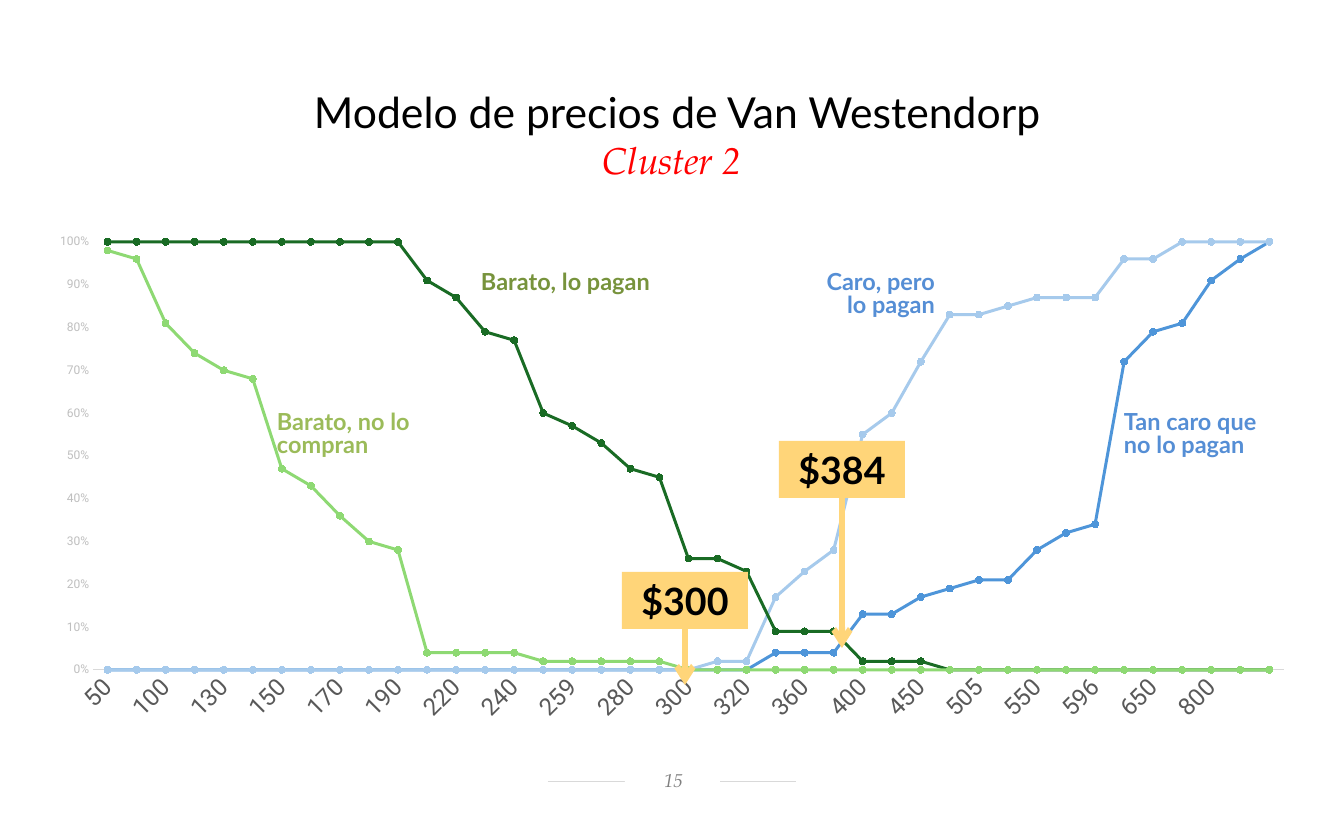
from dataclasses import dataclass

from lxml import etree
from pptx import Presentation, util as u
from pptx.chart.data import CategoryChartData
from pptx.dml.color import RGBColor
from pptx.enum import chart as charts, shapes, text
from pptx.oxml import parse_xml
from pptx.oxml.ns import nsdecls, qn

PX = 9525
LEFT, CENTER, RIGHT = text.PP_ALIGN.LEFT, text.PP_ALIGN.CENTER, text.PP_ALIGN.RIGHT
AMBER, GRAY, BLUE = "FFD579", "D9D9D9", "558ED5"


@dataclass
class Area:
    left: int
    top: int
    width: int
    height: int


@dataclass
class Label:
    words: str
    area: Area
    size: float
    color: str
    font: str = "Lato"
    bold: bool = False
    italic: bool = False
    align: text.PP_ALIGN = LEFT
    spacing: float = 1.0
    insets: tuple[int, int, int, int] = (12, 6, 12, 6)
    wrap: bool = True


@dataclass
class PricePoint:
    price: str
    area: Area
    arrow_end: int


@dataclass
class Curve:
    name: str
    color: str
    percents: list[int]


def curve_label(words: str, area: Area, color: str,
                align: text.PP_ALIGN = LEFT, wrap: bool = True) -> Label:
    return Label(words, area, 17.6, color, bold=True, align=align, spacing=0.8,
                 insets=(11, 5, 11, 6), wrap=wrap)


HEADINGS = [
    Label(" Modelo de precios de Van Westendorp", Area(0, 79, 1344, 65), 32, "000000",
          align=CENTER, insets=(13, 7, 13, 7)),
    Label("Cluster 2", Area(0, 130, 1344, 59), 28, "FF0000", "TeX Gyre Pagella",
          italic=True, align=CENTER, insets=(13, 7, 13, 7)),
]
PAGE_NUMBER = Label("15", Area(625, 767, 95, 28), 14, "808080", "TeX Gyre Pagella",
                    italic=True, align=CENTER, insets=(12, 2, 10, 5))
CURVE_LABELS = [
    curve_label("Caro, pero lo pagan", Area(799, 268, 147, 57), BLUE, RIGHT),
    curve_label("Barato, no lo\ncompran", Area(266, 408, 158, 57), "9BBB59", wrap=False),
    curve_label("Barato, lo pagan", Area(470, 268, 194, 35), "77933C", wrap=False),
    curve_label("Tan caro que no lo pagan", Area(1113, 408, 171, 57), BLUE),
]
PRICE_POINTS = [PricePoint("$384", Area(779, 441, 126, 57), 648),
                PricePoint("$300", Area(622, 572, 126, 57), 685)]

CHART = Area(35, 225, 1275, 516)
PLOT = Area(93, 242, 1191, 428)
PRICES = [50, 80, 100, *range(120, 201, 10), 220, 230, 240, 250, 259, 260, 280, 290, 300,
          305, 320, 350, 360, 380, 400, 420, 450, 500, 505, 520, 550, 580, 596, 600,
          650, 700, 800, 900, 1000]
CURVES = [
    Curve("Tan caro que no lo pagan", "4E95D9",
          [0] * 23 + [4, 4, 4, 13, 13, 17, 19, 21, 21, 28, 32, 34, 72, 79, 81, 91, 96, 100]),
    Curve("Caro, pero lo pagan", "A6CAEC",
          [0] * 21 + [2, 2, 17, 23, 28, 55, 60, 72, 83, 83, 85, 87, 87, 87, 96, 96]
          + [100] * 4),
    Curve("Barato, lo pagan", "196B24",
          [100] * 11 + [91, 87, 79, 77, 60, 57, 53, 47, 45, 26, 26, 23, 9, 9, 9, 2, 2, 2]
          + [0] * 12),
    Curve("Barato, no lo compran", "8ED973",
          [98, 96, 81, 74, 70, 68, 47, 43, 36, 30, 28, 4, 4, 4, 4, 2, 2, 2, 2, 2]
          + [0] * 21),
]


def px(*lengths: int) -> list[u.Emu]:
    return [u.Emu(length * PX) for length in lengths]


def bounds(area: Area) -> list[u.Emu]:
    return px(area.left, area.top, area.width, area.height)


def rgb(color: str) -> RGBColor:
    return RGBColor.from_string(color)


def style_font(font, name: str, size: float, color: str) -> None:
    font.name, font.size = name, u.Pt(size)
    font.color.rgb = rgb(color)


def write(shape, label: Label) -> None:
    frame = shape.text_frame
    frame.text = label.words
    frame.word_wrap = label.wrap
    (frame.margin_left, frame.margin_top,
     frame.margin_right, frame.margin_bottom) = px(*label.insets)
    for paragraph in frame.paragraphs:
        paragraph.alignment = label.align
        paragraph.line_spacing = label.spacing
        style_font(paragraph.font, label.font, label.size, label.color)
        paragraph.font.bold, paragraph.font.italic = label.bold, label.italic


def add_label(slide, label: Label) -> None:
    box = slide.shapes.add_textbox(*bounds(label.area))
    write(box, label)
    box.text_frame.auto_size = text.MSO_AUTO_SIZE.SHAPE_TO_FIT_TEXT


def add_box(slide, label: Label, fill: str, anchor: text.MSO_ANCHOR):
    box = slide.shapes.add_shape(shapes.MSO_SHAPE.RECTANGLE, *bounds(label.area))
    box.shadow.inherit = False
    box.fill.solid()
    box.fill.fore_color.rgb = rgb(fill)
    box.line.fill.background()
    write(box, label)
    box.text_frame.vertical_anchor = anchor
    return box


def add_line(slide, start: tuple[int, int], end: tuple[int, int], color: str, width: float):
    line = slide.shapes.add_connector(shapes.MSO_CONNECTOR.STRAIGHT, *px(*start, *end))
    line.line.color.rgb = rgb(color)
    line.line.width = u.Pt(width)
    etree.SubElement(line._element.spPr, qn("a:effectLst"))
    return line


def add_price_point(slide, point: PricePoint) -> None:
    area = point.area
    label = Label(point.price, area, 28.2, "000000", bold=True, align=CENTER)
    box = add_box(slide, label, AMBER, text.MSO_ANCHOR.TOP)
    middle = area.left + area.width // 2
    arrow = add_line(slide, (middle, area.top + area.height),
                     (middle, point.arrow_end), AMBER, 4.5)
    arrow.begin_connect(box, 2)
    etree.SubElement(arrow.line._get_or_add_ln(), qn("a:tailEnd"), type="arrow")


def place_plot(chart) -> None:
    """Fix the inner plot area, as fractions of the chart."""
    plot_area = chart._chartSpace.chart.plotArea
    for layout in plot_area.findall(qn("c:layout")):
        plot_area.remove(layout)
    fractions = {"x": (PLOT.left - CHART.left) / CHART.width,
                 "y": (PLOT.top - CHART.top) / CHART.height,
                 "w": PLOT.width / CHART.width, "h": PLOT.height / CHART.height}
    places = "".join(f'<c:{key} val="{value:.4f}"/>' for key, value in fractions.items())
    plot_area.insert(0, parse_xml(
        f'<c:layout {nsdecls("c")}><c:manualLayout><c:layoutTarget val="inner"/>'
        f'<c:xMode val="edge"/><c:yMode val="edge"/>{places}</c:manualLayout></c:layout>'))


def add_price_chart(slide) -> None:
    data = CategoryChartData(number_format="0%")
    data.categories = [str(price) for price in PRICES]
    for curve in CURVES:
        data.add_series(curve.name, [percent / 100 for percent in curve.percents])
    chart = slide.shapes.add_chart(charts.XL_CHART_TYPE.LINE_MARKERS,
                                   *bounds(CHART), data).chart
    chart.has_legend = chart.has_title = False
    style_font(chart.font, "Calibri", 10, "000000")
    place_plot(chart)
    chart.plots[0].vary_by_categories = False
    for series, curve in zip(chart.plots[0].series, CURVES):
        series.smooth = False
        series.format.line.color.rgb = rgb(curve.color)
        series.format.line.width = u.Pt(2.25)
        series.marker.style, series.marker.size = charts.XL_MARKER_STYLE.CIRCLE, 5
        for paint in (series.marker.format.fill, series.marker.format.line.fill):
            paint.solid()
            paint.fore_color.rgb = rgb(curve.color)

    prices, shares = chart.category_axis, chart.value_axis
    for axis, size, color in ((prices, 18, "595959"), (shares, 9, "BFBFBF")):
        axis.has_major_gridlines = False
        axis.major_tick_mark = axis.minor_tick_mark = charts.XL_TICK_MARK.NONE
        style_font(axis.tick_labels.font, "Roboto", size, color)
    prices.format.line.color.rgb = rgb(GRAY)
    prices.format.line.width = u.Pt(0.75)
    prices._element.txPr.bodyPr.set("rot", "-2700000")
    skip = parse_xml(f'<c:tickLblSkip {nsdecls("c")} val="2"/>')
    prices._element.find(qn("c:noMultiLvlLbl")).addprevious(skip)
    shares.format.line.fill.background()
    shares.minimum_scale, shares.maximum_scale, shares.major_unit = 0, 1, 0.1
    shares.tick_labels.number_format = "0%"
    shares.tick_labels.number_format_is_linked = False


def main() -> None:
    deck = Presentation()
    deck.slide_width, deck.slide_height = px(1344, 816)
    slide = deck.slides.add_slide(deck.slide_layouts[6])
    add_line(slide, (548, 781), (796, 781), GRAY, 0.5)
    add_price_chart(slide)
    add_box(slide, PAGE_NUMBER, "FFFFFF", text.MSO_ANCHOR.MIDDLE)
    for label in HEADINGS + CURVE_LABELS:
        add_label(slide, label)
    for point in PRICE_POINTS:
        add_price_point(slide, point)
    deck.save("out.pptx")


if __name__ == "__main__":
    main()
